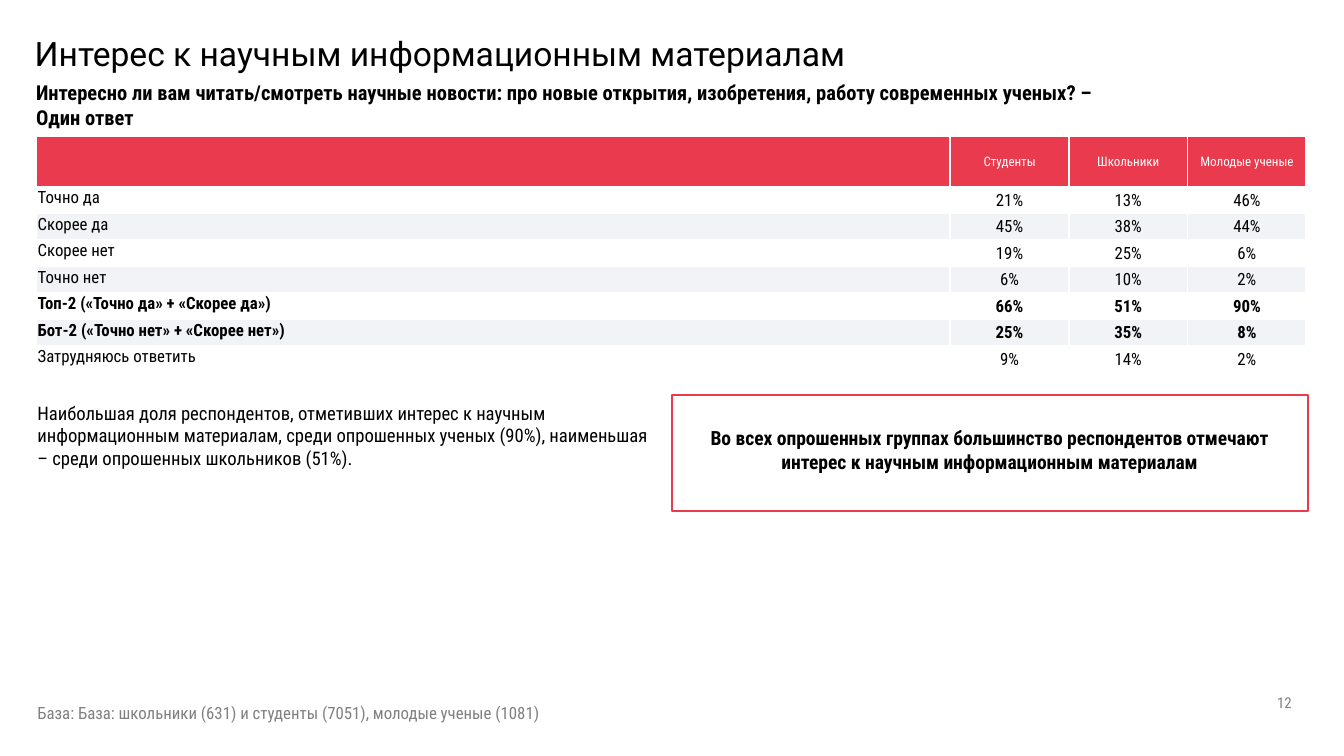
from dataclasses import dataclass

from lxml import etree
from pptx import Presentation
from pptx.dml.color import RGBColor
from pptx.enum import shapes, text
from pptx.oxml.ns import qn
from pptx.util import Inches, Pt


@dataclass(frozen=True)
class Theme:
    accent: str = "E93A4E"
    band: str = "F2F3F6"
    white: str = "FFFFFF"
    ink: str = "000000"
    muted: str = "808080"
    title_font: str = "Roboto"
    body_font: str = "Roboto Condensed"
    title: float = 18
    subtitle: float = 11
    callout: float = 10.5
    body: float = 10
    small: float = 9
    page: float = 8
    header: float = 7


@dataclass(frozen=True)
class TextBox:
    left: float
    top: float
    width: float
    height: float
    words: str
    size: float
    color: str = Theme.ink
    font: str = Theme.body_font
    bold: bool = False
    align: text.PP_ALIGN = text.PP_ALIGN.LEFT
    inset_top: float = 0.05
    spacing: float | Pt | None = None


@dataclass(frozen=True)
class Row:
    label: str
    values: tuple[str, ...]
    bold: bool = False


THEME = Theme()
GROUPS = ("Студенты", "Школьники", "Молодые ученые")
ROWS = (
    Row("Точно да", ("21%", "13%", "46%")),
    Row("Скорее да", ("45%", "38%", "44%")),
    Row("Скорее нет", ("19%", "25%", "6%")),
    Row("Точно нет", ("6%", "10%", "2%")),
    Row("Топ-2 («Точно да» + «Скорее да»)", ("66%", "51%", "90%"), True),
    Row("Бот-2 («Точно нет» + «Скорее нет»)", ("25%", "35%", "8%"), True),
    Row("Затрудняюсь ответить", ("9%", "14%", "2%")),
)
TEXTS = (
    TextBox(0.16, 0.15, 8.62, 1.09, "Интерес к научным информационным материалам",
            THEME.title, font=THEME.title_font, inset_top=0.12, spacing=Pt(20)),
    TextBox(7.46, 5.07, 2.25, 0.3, "12", THEME.page, THEME.muted,
            align=text.PP_ALIGN.RIGHT, inset_top=0.09),
    TextBox(5, 3.12, 4.73, 0.45,
            "Во всех опрошенных группах большинство респондентов отмечают "
            "интерес к научным информационным материалам",
            THEME.callout, bold=True, align=text.PP_ALIGN.CENTER),
    TextBox(0.18, 2.94, 4.82, 0.61,
            "Наибольшая доля респондентов, отметивших интерес к научным "
            "информационным материалам, среди опрошенных ученых (90%), "
            "наименьшая – среди опрошенных школьников (51%).", THEME.body),
    TextBox(0.17, 0.49, 8.24, 0.7,
            "Интересно ли вам читать/смотреть научные новости: про новые открытия, "
            "изобретения, работу современных ученых? – Один ответ",
            THEME.subtitle, bold=True, inset_top=0.1, spacing=1.02),
    TextBox(0.18, 5.18, 4.82, 0.25,
            "База: База: школьники (631) и студенты (7051), молодые ученые (1081)",
            THEME.small, THEME.muted),
)


def style_runs(p, font: str, size: float, color: str, bold: bool) -> None:
    for r in p.runs:
        r.font.name = font
        r.font.size = Pt(size)
        r.font.bold = bold
        r.font.color.rgb = RGBColor.from_string(color)


def add_text(slide, box: TextBox) -> None:
    sp = slide.shapes.add_textbox(Inches(box.left), Inches(box.top),
                                  Inches(box.width), Inches(box.height))
    tf = sp.text_frame
    tf.word_wrap = True
    tf.margin_top = Inches(box.inset_top)
    tf.text = box.words
    p = tf.paragraphs[0]
    p.alignment = box.align
    p.line_spacing = box.spacing
    style_runs(p, box.font, box.size, box.color, box.bold)


def add_callout_frame(slide) -> None:
    sp = slide.shapes.add_shape(shapes.MSO_SHAPE.RECTANGLE, Inches(5), Inches(2.94),
                                Inches(4.73), Inches(0.86))
    sp.shadow.inherit = False
    sp.fill.background()
    sp.line.color.rgb = RGBColor.from_string(THEME.accent)
    sp.line.width = Pt(1)


def set_borders(cell, color: str) -> None:
    tc_pr = cell._tc.get_or_add_tcPr()
    for side in ("lnL", "lnR", "lnT", "lnB"):
        ln = etree.SubElement(tc_pr, qn(f"a:{side}"), w=str(Pt(1)))
        fill = etree.SubElement(ln, qn("a:solidFill"))
        etree.SubElement(fill, qn("a:srgbClr"), val=color)


def fill_cell(cell, words: str, fill: str, size: float, color: str,
              bold: bool, is_label: bool) -> None:
    set_borders(cell, THEME.white)
    cell.fill.solid()
    cell.fill.fore_color.rgb = RGBColor.from_string(fill)
    cell.margin_left = cell.margin_right = cell.margin_top = Inches(0.01)
    cell.margin_bottom = 0
    anchor = text.MSO_ANCHOR
    cell.vertical_anchor = anchor.TOP if is_label else anchor.MIDDLE
    cell.text_frame.text = words
    p = cell.text_frame.paragraphs[0]
    p.alignment = text.PP_ALIGN.LEFT if is_label else text.PP_ALIGN.CENTER
    style_runs(p, THEME.body_font, size, color, bold)


def add_results_table(slide) -> None:
    width, height, label_width, header_height = 9.45, 1.76, 6.8, 0.38
    table = slide.shapes.add_table(len(ROWS) + 1, len(GROUPS) + 1, Inches(0.27),
                                   Inches(1.01), Inches(width), Inches(height)).table
    for i, column in enumerate(table.columns):
        column.width = Inches((width - label_width) / len(GROUPS) if i else label_width)
    for i, row in enumerate(table.rows):
        row.height = Inches((height - header_height) / len(ROWS) if i else header_height)

    for j, words in enumerate(("", *GROUPS)):
        fill_cell(table.cell(0, j), words, THEME.accent, THEME.header,
                  THEME.white, False, j == 0)
    for i, row in enumerate(ROWS, 1):
        fill = THEME.white if i % 2 else THEME.band
        for j, words in enumerate((row.label, *row.values)):
            fill_cell(table.cell(i, j), words, fill, THEME.small,
                      THEME.ink, row.bold, j == 0)


def main() -> None:
    prs = Presentation()
    prs.slide_width = Inches(10)
    prs.slide_height = prs.slide_width * 9 // 16
    slide = prs.slides.add_slide(prs.slide_layouts[6])
    add_callout_frame(slide)
    for box in TEXTS:
        add_text(slide, box)
    add_results_table(slide)
    prs.save("out.pptx")


if __name__ == "__main__":
    main()
